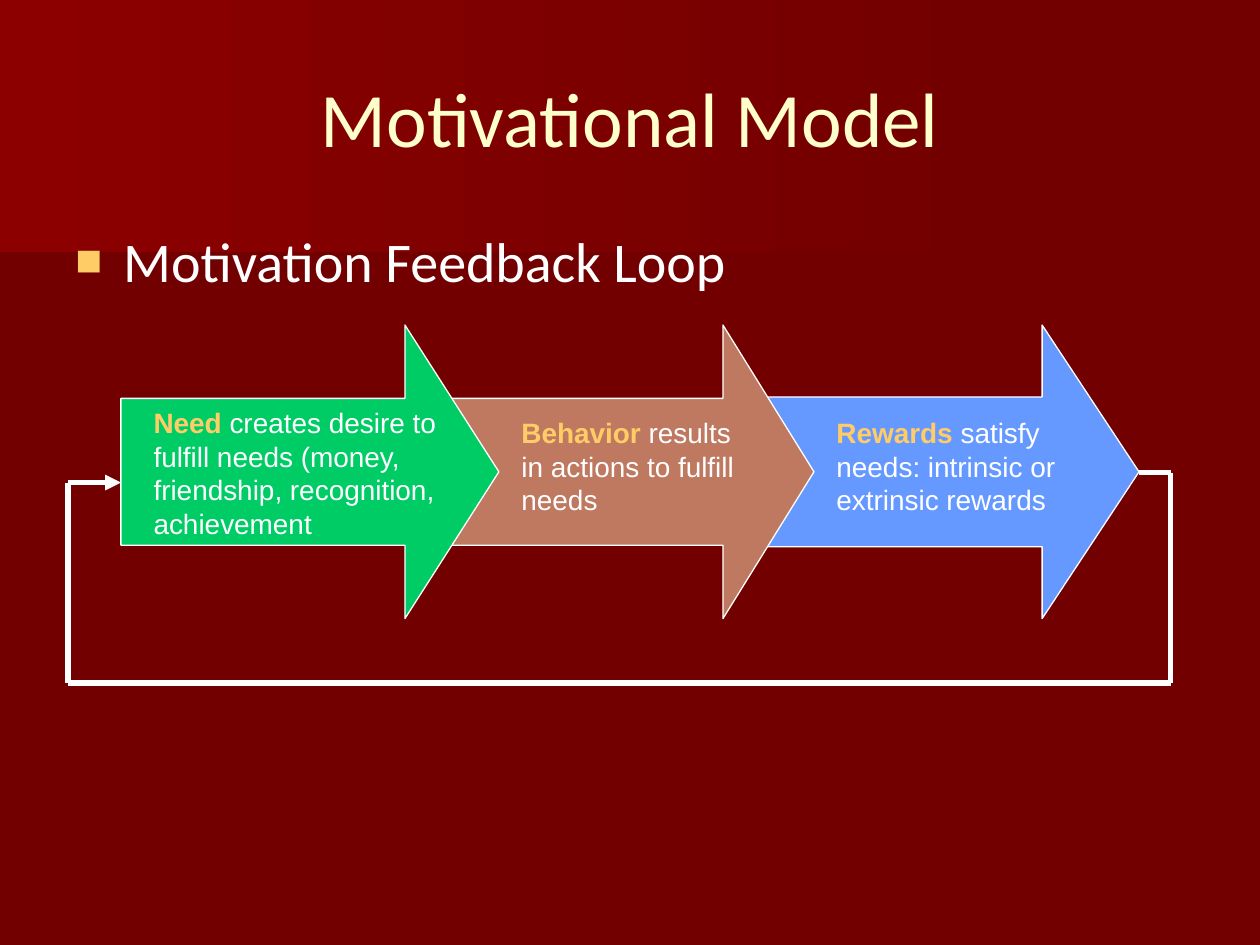
from lxml import etree
from pptx import Presentation, util as u
from pptx.dml.color import RGBColor
from pptx.enum import shapes as sh, text as tx
from pptx.oxml.ns import qn

HUE = {
    "back": "720000", "shade": "6F0000", "glow": "8C0000",
    "title": "FFFFCC", "key": "FFCC66", "white": "FFFFFF",
    "need": "00CC66", "act": "BE7960", "gain": "6699FF",
}
WIDE, HIGH = 10, 7.5
TITLE = "Motivational Model"
POINT = "Motivation Feedback Loop"

# Background bands: outline points, left colour
BANDS = [
    ([(7.78, 1.53), (0, 2.17), (0, 1.01), (7.79, 1.01), (7.78, 1.28)], "shade"),
    ([(7.92, 1.62), (0, 2.08), (0, 0), (7.92, 0)], "glow"),
]
# Arrows: left, width, shaft share, head share, fill
TOP, TALL = 2.58, 2.33
ARROWS = [
    (5.96, 3.08, 0.51, 0.33, "gain"),
    (3.54, 2.92, 0.5, 0.31, "act"),
    (0.96, 3, 0.5, 0.32, "need"),
]
# Labels: box, key word, rest
LABELS = [
    ((1.12, 3.17, 2.75, 1.17), "Need",
     " creates desire to fulfill needs (money, friendship, recognition, achievement"),
    ((4.04, 3.25, 2, 0.9), "Behavior", " results in actions to fulfill needs"),
    ((6.54, 3.25, 2, 0.9), "Rewards ",
     "satisfy needs: intrinsic or extrinsic rewards"),
]
# Feedback path from the last arrow's tip back to the first arrow
LOOP = [(9.04, 3.75), (9.29, 3.75), (9.29, 5.42),
        (0.54, 5.42), (0.54, 3.83), (0.96, 3.83)]


def rgb(name):
    return RGBColor.from_string(HUE[name])


def inches(vals):
    return [u.Inches(v) for v in vals]


def style(run, font, size, hue, bold=False):
    run.font.name, run.font.size, run.font.bold = font, u.Pt(size), bold
    run.font.color.rgb = rgb(hue)


def add_text(slide, box, parts, font, size):
    """Add a wrapped text box; parts are (text, colour, bold) runs."""
    frame = slide.shapes.add_textbox(*inches(box)).text_frame
    frame.word_wrap = True
    para = frame.paragraphs[0]
    for words, hue, bold in parts:
        run = para.add_run()
        run.text = words
        style(run, font, size, hue, bold)
    return frame


def add_band(slide, pts, hue):
    pen = slide.shapes.build_freeform(*pts[0], scale=u.Inches(1))
    pen.add_line_segments(pts[1:], close=True)
    band = pen.convert_to_shape()
    band.shadow.inherit = False
    band.line.fill.background()
    band.fill.gradient()
    band.fill.gradient_angle = 0
    for stop, name, pos in zip(band.fill.gradient_stops, (hue, "back"), (0, 1)):
        stop.color.rgb, stop.position = rgb(name), pos


def add_arrow(slide, left, width, shaft, head, hue):
    arrow = slide.shapes.add_shape(
        sh.MSO_SHAPE.RIGHT_ARROW, *inches((left, TOP, width, TALL)))
    arrow.adjustments[0], arrow.adjustments[1] = shaft, head
    arrow.shadow.inherit = False
    arrow.fill.solid()
    arrow.fill.fore_color.rgb = rgb(hue)
    arrow.line.color.rgb, arrow.line.width = rgb("white"), u.Pt(0.75)


def add_line(slide, start, end):
    line = slide.shapes.add_connector(
        sh.MSO_CONNECTOR.STRAIGHT, *inches(start + end))
    line.line.color.rgb, line.line.width = rgb("white"), u.Pt(3)
    etree.SubElement(line._element.spPr, qn("a:effectLst"))
    return line


def add_bullet(para):
    props = para._p.get_or_add_pPr()
    props.set("marL", str(u.Inches(0.38)))
    props.set("indent", str(-u.Inches(0.38)))
    tint = etree.SubElement(props, qn("a:buClr"))
    etree.SubElement(tint, qn("a:srgbClr"), val=HUE["key"])
    etree.SubElement(props, qn("a:buSzPct"), val="80000")
    etree.SubElement(props, qn("a:buFont"), typeface="Arial")
    etree.SubElement(props, qn("a:buChar"), char="■")


def main():
    deck = Presentation()
    deck.slide_width, deck.slide_height = inches((WIDE, HIGH))
    slide = deck.slides.add_slide(deck.slide_layouts[6])
    slide.background.fill.solid()
    slide.background.fill.fore_color.rgb = rgb("back")

    for band in BANDS:
        add_band(slide, *band)

    head = add_text(slide, (0.5, 0.3, 9, 1.25),
                    [(TITLE, "title", False)], "Calibri", 44)
    head.vertical_anchor = tx.MSO_ANCHOR.MIDDLE
    head.paragraphs[0].alignment = tx.PP_ALIGN.CENTER

    body = add_text(slide, (0.5, 1.75, 9, 4.92),
                    [(POINT, "white", False)], "Calibri", 32)
    body.paragraphs[0].space_before = u.Pt(6.4)
    add_bullet(body.paragraphs[0])

    for arrow in ARROWS:
        add_arrow(slide, *arrow)
    for box, key, rest in LABELS:
        add_text(slide, box, [(key, "key", True), (rest, "white", False)],
                 "Arial", 16)

    for start, end in zip(LOOP, LOOP[1:]):
        line = add_line(slide, start, end)
    etree.SubElement(line.line._get_or_add_ln(), qn("a:tailEnd"), type="triangle")

    deck.save("out.pptx")


if __name__ == "__main__":
    main()
